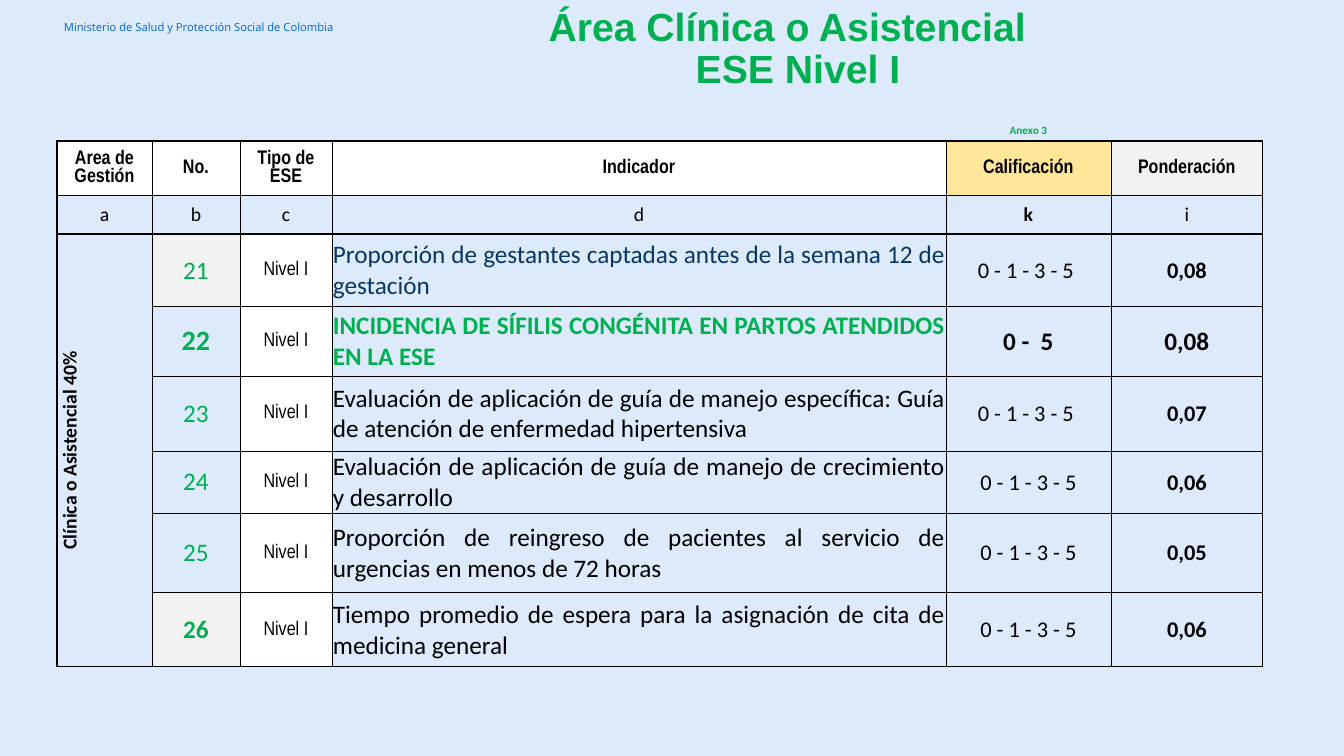
from lxml import etree
from pptx import Presentation
from pptx import util as u
from pptx.dml.color import RGBColor
from pptx.enum import text as t
from pptx.oxml.ns import qn

PX = 914400 / 100.8
SKY = RGBColor(0xDC, 0xEA, 0xFB)
BLUE = RGBColor(0x00, 0x66, 0xCD)
GREEN = RGBColor(0x00, 0xB0, 0x50)
NAVY = RGBColor(0x07, 0x37, 0x63)
BLACK = RGBColor(0, 0, 0)
WHITE = RGBColor(255, 255, 255)
GREY = RGBColor(0xF2, 0xF2, 0xF2)
GOLD = RGBColor(0xFF, 0xE6, 0x99)
NARROW = "Arial Narrow"
MID = t.MSO_ANCHOR.MIDDLE
CENTER, JUSTIFY = t.PP_ALIGN.CENTER, t.PP_ALIGN.JUSTIFY


def px(n):
    return u.Emu(round(n * PX))


def write(para, words, size, color=BLACK, bold=False, face="Calibri"):
    run = para.add_run()
    run.text = words
    font = run.font
    font.size, font.bold, font.name = u.Pt(size), bold, face
    font.color.rgb = color


prs = Presentation()
prs.slide_width, prs.slide_height = px(1344), px(756)
slide = prs.slides.add_slide(prs.slide_layouts[5])
slide.background.fill.solid()
slide.background.fill.fore_color.rgb = SKY

# Heading
box = slide.shapes.add_textbox(px(54), px(14), px(314), px(26))
box.text_frame.word_wrap = True
box.text_frame.vertical_anchor = MID
write(box.text_frame.paragraphs[0],
      "Ministerio de Salud y Protección Social de Colombia", 8, BLUE, face="Open Sans")

title = slide.shapes.title
title.left, title.top, title.width, title.height = px(400), px(14), px(796), px(71)
frame = title.text_frame
frame.word_wrap = True
frame.auto_size = t.MSO_AUTO_SIZE.NONE
frame.vertical_anchor = MID
frame.add_paragraph()
for para, line in zip(frame.paragraphs, ["Área Clínica o Asistencial  ", "ESE Nivel I"]):
    para.alignment = CENTER
    para.line_spacing = 0.9
    para.space_before = u.Pt(0)
    write(para, line, 28, GREEN, True, "Arial")

# Table content: each cell is (text, size, colour, bold, font), each fill by place
heads = ["Area de Gestión", "No.", "Tipo de ESE", "Indicador", "Calificación", "Ponderación"]
goals = [
    ("21", "Proporción de gestantes captadas antes de la semana 12 de gestación",
     "0 - 1 - 3 - 5 ", "0,08"),
    ("22", "INCIDENCIA DE SÍFILIS CONGÉNITA EN PARTOS ATENDIDOS EN LA ESE",
     "0 -  5", "0,08"),
    ("23", "Evaluación de aplicación de guía de manejo específica: Guía de atención "
     "de enfermedad hipertensiva", "0 - 1 - 3 - 5 ", "0,07"),
    ("24", "Evaluación de aplicación de guía de manejo de crecimiento y desarrollo",
     "0 - 1 - 3 - 5", "0,06"),
    ("25", "Proporción de reingreso de pacientes al servicio de urgencias en menos "
     "de 72 horas", "0 - 1 - 3 - 5", "0,05"),
    ("26", "Tiempo promedio de espera para la asignación de cita de medicina general",
     "0 - 1 - 3 - 5", "0,06"),
]
cells = {(0, 4): ("Anexo 3", 8, GREEN, True)}
fills = {(1, 4): GOLD, (1, 5): GREY, (3, 1): GREY, (8, 1): GREY}
for c, head in enumerate(heads):
    cells[1, c] = (head, 14, BLACK, True, NARROW)
    cells[2, c] = ("abcdki"[c], 14, BLACK, c == 4)
    fills.setdefault((1, c), WHITE)
cells[3, 0] = ("Clínica o Asistencial 40%", 14, BLACK, True)
for r, (num, goal, marks, weight) in enumerate(goals, 3):
    key = num == "22"
    ink = {"21": NAVY, "22": GREEN}.get(num, BLACK)
    cells[r, 1] = (num, 20 if key else 18, GREEN, num in ("22", "26"))
    cells[r, 2] = ("Nivel I", 14, BLACK, False, NARROW)
    cells[r, 3] = (goal, 18, ink, key)
    cells[r, 4] = (marks, 18 if key else 16, BLACK, key)
    cells[r, 5] = (weight, 18 if key else 16, BLACK, True)
    fills[r, 2] = WHITE

# Table
cols = [95, 88, 92, 614, 165, 152]
rows = [22, 54, 39, 72, 70, 75, 62, 80, 74]
table = slide.shapes.add_table(len(rows), len(cols), px(57), px(119),
                               px(sum(cols)), px(sum(rows))).table
table.first_row = table.horz_banding = False
# The style with neither fill nor grid
table._tbl.tblPr.find(qn("a:tableStyleId")).text = "{2D5ABB26-0587-4C30-8999-92F81FD0307C}"
for col, wide in zip(table.columns, cols):
    col.width = px(wide)
for row, high in zip(table.rows, rows):
    row.height = px(high)
table.cell(3, 0).merge(table.cell(8, 0))

for r in range(len(rows)):
    for c in range(len(cols)):
        cell = table.cell(r, c)
        cell.margin_left = cell.margin_right = cell.margin_top = px(1)
        cell.margin_bottom = 0
        cell.vertical_anchor = MID
        props = cell._tc.get_or_add_tcPr()
        edges = {"lnB": 1.5}
        if r:
            edges = {"lnL": 0.5 if c else 1.5,
                     "lnR": 1 if c == 5 else 0.5,
                     "lnT": {1: 1.5, 3: 1}.get(r, 0.5),
                     "lnB": 1 if r in (2, 8) else 0.5}
        for side, width in edges.items():
            line = etree.SubElement(props, qn("a:" + side), w=str(u.Pt(width)))
            solid = etree.SubElement(line, qn("a:solidFill"))
            etree.SubElement(solid, qn("a:srgbClr"), val=str(BLACK))
        if (r, c) in fills:
            cell.fill.solid()
            cell.fill.fore_color.rgb = fills[r, c]
        else:
            cell.fill.background()
        para = cell.text_frame.paragraphs[0]
        if (r, c) in cells:
            para.alignment = JUSTIFY if c == 3 and r > 2 else CENTER
            write(para, *cells[r, c])
        else:
            etree.SubElement(para._p, qn("a:endParaRPr"), sz="800")
table.cell(3, 0)._tc.get_or_add_tcPr().set("vert", "vert270")

prs.save("out.pptx")
